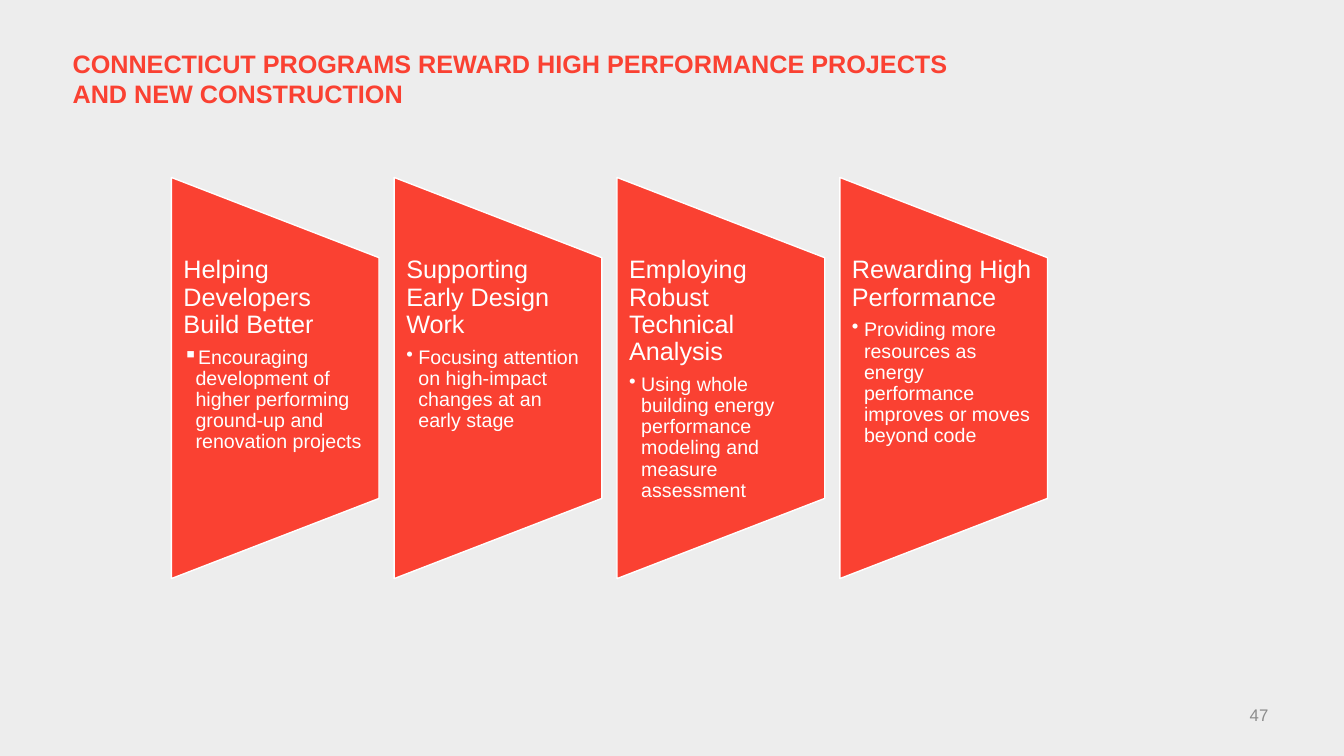
from dataclasses import dataclass

from lxml.etree import SubElement
from pptx import Presentation
from pptx.dml.color import RGBColor
from pptx.enum.shapes import MSO_SHAPE
from pptx.enum.text import MSO_ANCHOR, PP_ALIGN
from pptx.oxml.ns import qn
from pptx.slide import Slide
from pptx.text.text import TextFrame, _Paragraph as Paragraph
from pptx.util import Pt

EMU_PER_PX = 9144  # 100 px to the inch


@dataclass(frozen=True)
class Theme:
    font: str = "Arial"
    background: RGBColor = RGBColor(0xED, 0xED, 0xED)
    accent: RGBColor = RGBColor(0xFA, 0x41, 0x32)
    on_accent: RGBColor = RGBColor(0xFF, 0xFF, 0xFF)
    muted: RGBColor = RGBColor(0x8C, 0x8C, 0x8C)
    heading_size: int = 18
    detail_size: int = 14
    number_size: int = 12


@dataclass(frozen=True)
class Program:
    heading: str
    detail: str
    bullet: str = "•"


THEME = Theme()
PROGRAMS = [
    Program(
        "Helping Developers Build Better",
        "Encouraging development of higher performing ground-up and renovation projects",
        "▪",
    ),
    Program(
        "Supporting Early Design Work",
        "Focusing attention on high-impact changes at an early stage",
    ),
    Program(
        "Employing Robust Technical Analysis",
        "Using whole building energy performance modeling and measure assessment",
    ),
    Program(
        "Rewarding High Performance",
        "Providing more resources as energy performance improves or moves beyond code",
    ),
]

PANEL_LEFT, PANEL_PITCH = 170, 221
PANEL_WIDTH, PANEL_HEIGHT = 206, 398
PANEL_MIDDLE = 375
PANEL_TEXT_TOP, PANEL_TEXT_HEIGHT = 255, 239


def px(length: int) -> int:
    return length * EMU_PER_PX


def add_text_area(slide: Slide, left: int, top: int, width: int, height: int,
                  inset_left: int = 0, inset_right: int = 0) -> TextFrame:
    frame = slide.shapes.add_textbox(px(left), px(top), px(width), px(height)).text_frame
    frame.word_wrap = True
    frame.vertical_anchor = MSO_ANCHOR.TOP
    frame.margin_left, frame.margin_right = px(inset_left), px(inset_right)
    frame.margin_top = frame.margin_bottom = 0
    return frame


def write(paragraph: Paragraph, text: str, size: int, color: RGBColor,
          bold: bool = False) -> None:
    paragraph.text = text
    font = paragraph.font
    font.name, font.size, font.bold = THEME.font, Pt(size), bold
    font.color.rgb = color


def add_bullet(paragraph: Paragraph, symbol: str, indent: int) -> None:
    properties = paragraph._p.get_or_add_pPr()
    properties.set("marL", str(px(indent)))
    properties.set("indent", str(-px(indent)))
    bullet = SubElement(properties, qn("a:buChar"))
    bullet.set("char", symbol)
    # The schema wants the bullet ahead of the default run properties.
    properties.find(qn("a:defRPr")).addprevious(bullet)


def add_panel(slide: Slide, program: Program, left: int) -> None:
    """Draw one trapezoid, tall side left, with its heading and detail."""
    # Size and place are those before the quarter turn about the centre.
    panel = slide.shapes.add_shape(
        MSO_SHAPE.FLOWCHART_MANUAL_OPERATION,
        px(left + (PANEL_WIDTH - PANEL_HEIGHT) // 2),
        px(PANEL_MIDDLE - PANEL_WIDTH // 2),
        px(PANEL_HEIGHT), px(PANEL_WIDTH),
    )
    panel.rotation = 270
    panel.shadow.inherit = False
    panel.fill.solid()
    panel.fill.fore_color.rgb = THEME.accent
    panel.line.color.rgb = THEME.on_accent
    panel.line.width = Pt(1)

    frame = add_text_area(slide, left, PANEL_TEXT_TOP, PANEL_WIDTH, PANEL_TEXT_HEIGHT,
                          inset_left=12, inset_right=13)
    heading, detail = frame.paragraphs[0], frame.add_paragraph()
    write(heading, program.heading, THEME.heading_size, THEME.on_accent)
    write(detail, program.detail, THEME.detail_size, THEME.on_accent)
    heading.line_spacing = detail.line_spacing = 0.9
    heading.space_after, detail.space_after = Pt(6), Pt(2)
    detail.level = 1
    add_bullet(detail, program.bullet, indent=12)


def main() -> None:
    presentation = Presentation()
    presentation.slide_width, presentation.slide_height = px(1333), px(750)
    slide = presentation.slides.add_slide(presentation.slide_layouts[6])
    slide.background.fill.solid()
    slide.background.fill.fore_color.rgb = THEME.background

    title = add_text_area(slide, 72, 48, 1102, 94).paragraphs[0]
    write(title, "CONNECTICUT PROGRAMS REWARD HIGH PERFORMANCE PROJECTS\nAND NEW CONSTRUCTION",
          THEME.heading_size, THEME.accent, bold=True)
    title.space_after = Pt(3)

    for position, program in enumerate(PROGRAMS):
        add_panel(slide, program, PANEL_LEFT + position * PANEL_PITCH)

    page_number = add_text_area(slide, 958, 695, 300, 40).paragraphs[0]
    write(page_number, "47", THEME.number_size, THEME.muted)
    page_number.alignment = PP_ALIGN.RIGHT
    page_number.line_spacing = 1.22

    presentation.save("out.pptx")


if __name__ == "__main__":
    main()
